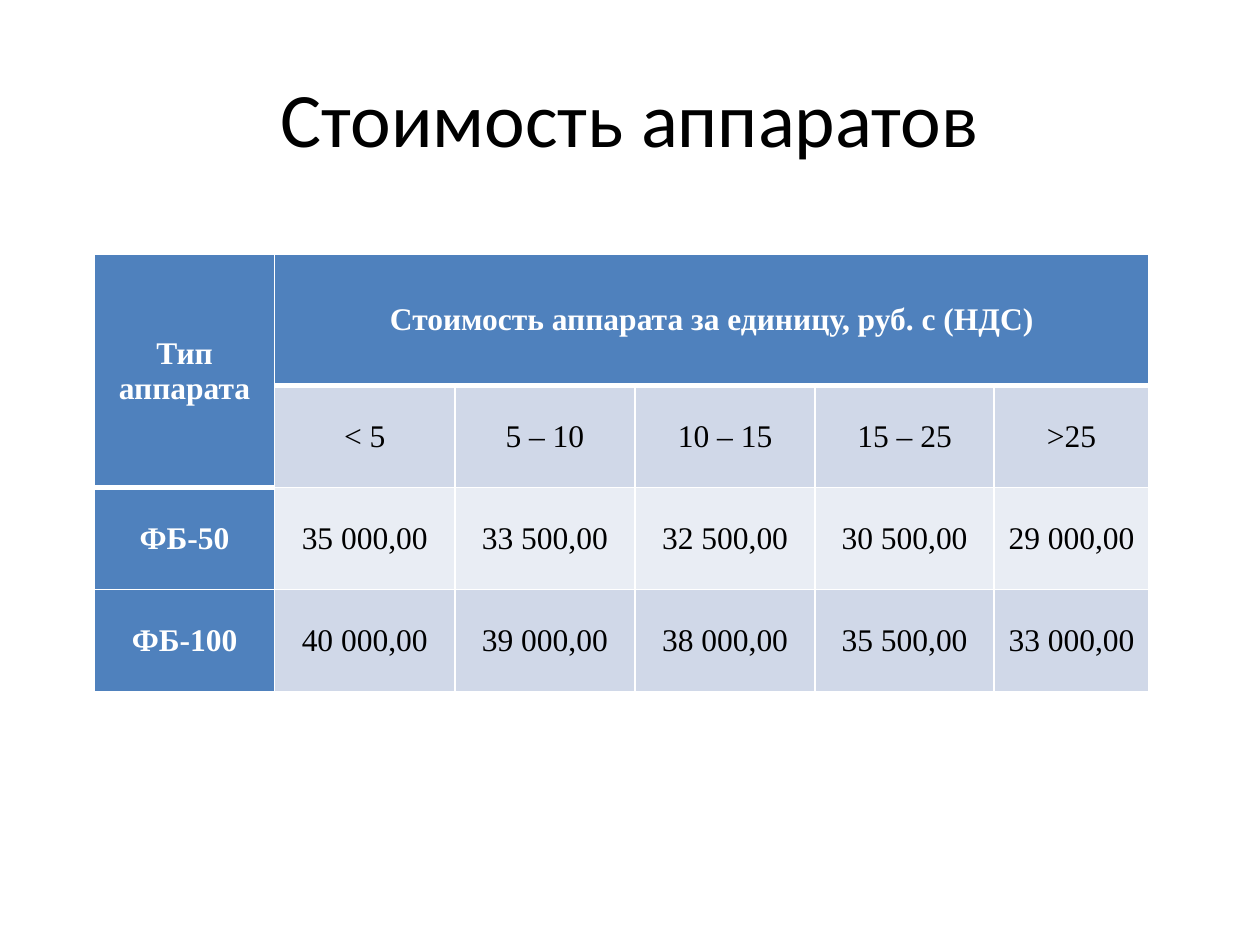
from dataclasses import dataclass

from lxml import etree
from pptx import Presentation
from pptx import util as u
from pptx.dml.color import RGBColor
from pptx.enum import text
from pptx.oxml import ns


@dataclass(frozen=True)
class Theme:
    title_font: str = "Calibri"
    table_font: str = "Times New Roman"
    title_size: int = 44
    table_size: int = 18
    dark: str = "000000"
    light: str = "FFFFFF"
    accent: str = "4F81BD"
    bands: tuple = ("E9EDF4", "D0D8E8")
    thin: int = 1
    thick: int = 3


class SlideBuilder:
    def __init__(self, slide, theme):
        self.slide = slide
        self.theme = theme

    def format_text(self, text_frame, font_name, size, color, bold=False):
        text_frame.vertical_anchor = text.MSO_ANCHOR.MIDDLE
        for paragraph in text_frame.paragraphs:
            paragraph.alignment = text.PP_ALIGN.CENTER
            for run in paragraph.runs:
                run.font.name = font_name
                run.font.size = u.Pt(size)
                run.font.bold = bold
                run.font.color.rgb = RGBColor.from_string(color)

    def title(self, wording, left, top, width, height):
        shape = self.slide.shapes.title
        shape.left, shape.top = u.Inches(left), u.Inches(top)
        shape.width, shape.height = u.Inches(width), u.Inches(height)
        shape.text_frame.text = wording
        self.format_text(shape.text_frame, self.theme.title_font,
                         self.theme.title_size, self.theme.dark)

    def borders(self, cell, top, bottom):
        properties = cell._tc.get_or_add_tcPr()
        widths = {"L": self.theme.thin, "R": self.theme.thin, "T": top, "B": bottom}
        for position, (side, width) in enumerate(widths.items()):
            line = etree.Element(ns.qn(f"a:ln{side}"), w=str(u.Pt(width)))
            fill = etree.SubElement(line, ns.qn("a:solidFill"))
            etree.SubElement(fill, ns.qn("a:srgbClr"), val=self.theme.light)
            properties.insert(position, line)

    def style_cell(self, cell, row, column):
        theme = self.theme
        is_header = row == 0 or column == 0
        last_header_row = 1 if column == 0 else 0
        cell.margin_left = cell.margin_right = u.Inches(0.01)
        cell.margin_top = cell.margin_bottom = u.Inches(0.01)
        cell.vertical_anchor = text.MSO_ANCHOR.MIDDLE
        cell.fill.solid()
        fill_color = theme.accent if is_header else theme.bands[row % 2]
        cell.fill.fore_color.rgb = RGBColor.from_string(fill_color)
        self.borders(
            cell,
            theme.thick if row == last_header_row + 1 else theme.thin,
            theme.thick if row <= last_header_row else theme.thin,
        )
        self.format_text(cell.text_frame, theme.table_font, theme.table_size,
                         theme.light if is_header else theme.dark, is_header)

    def price_table(self, rows, left, top, column_widths, row_heights):
        table = self.slide.shapes.add_table(
            len(rows), len(column_widths), u.Inches(left), u.Inches(top),
            u.Inches(sum(column_widths)), u.Inches(sum(row_heights)),
        ).table
        for column, width in zip(table.columns, column_widths):
            column.width = u.Inches(width)
        for row, height in zip(table.rows, row_heights):
            row.height = u.Inches(height)
        for row, values in enumerate(rows):
            for column, value in enumerate(values):
                cell = table.cell(row, column)
                cell.text_frame.text = value
                self.style_cell(cell, row, column)
        table.cell(0, 0).merge(table.cell(1, 0))
        table.cell(0, 1).merge(table.cell(0, len(column_widths) - 1))


def main():
    presentation = Presentation()
    presentation.slide_width = u.Inches(10)
    presentation.slide_height = u.Inches(7.5)
    slide = presentation.slides.add_slide(presentation.slide_layouts[5])
    builder = SlideBuilder(slide, Theme())
    builder.title("Стоимость аппаратов", 0.5, 0.3, 9, 1.25)
    prices = [
        ["Тип аппарата", "Стоимость аппарата за единицу, руб. с (НДС)", "", "", "", ""],
        ["", "< 5", "5 – 10", "10 – 15", "15 – 25", ">25"],
        ["ФБ-50", "35 000,00", "33 500,00", "32 500,00", "30 500,00", "29 000,00"],
        ["ФБ-100", "40 000,00", "39 000,00", "38 000,00", "35 500,00", "33 000,00"],
    ]
    builder.price_table(prices, 0.75, 2.02, [1.43] * 4 + [1.42, 1.23], [1.04] + [0.81] * 3)
    presentation.save("out.pptx")


if __name__ == "__main__":
    main()
